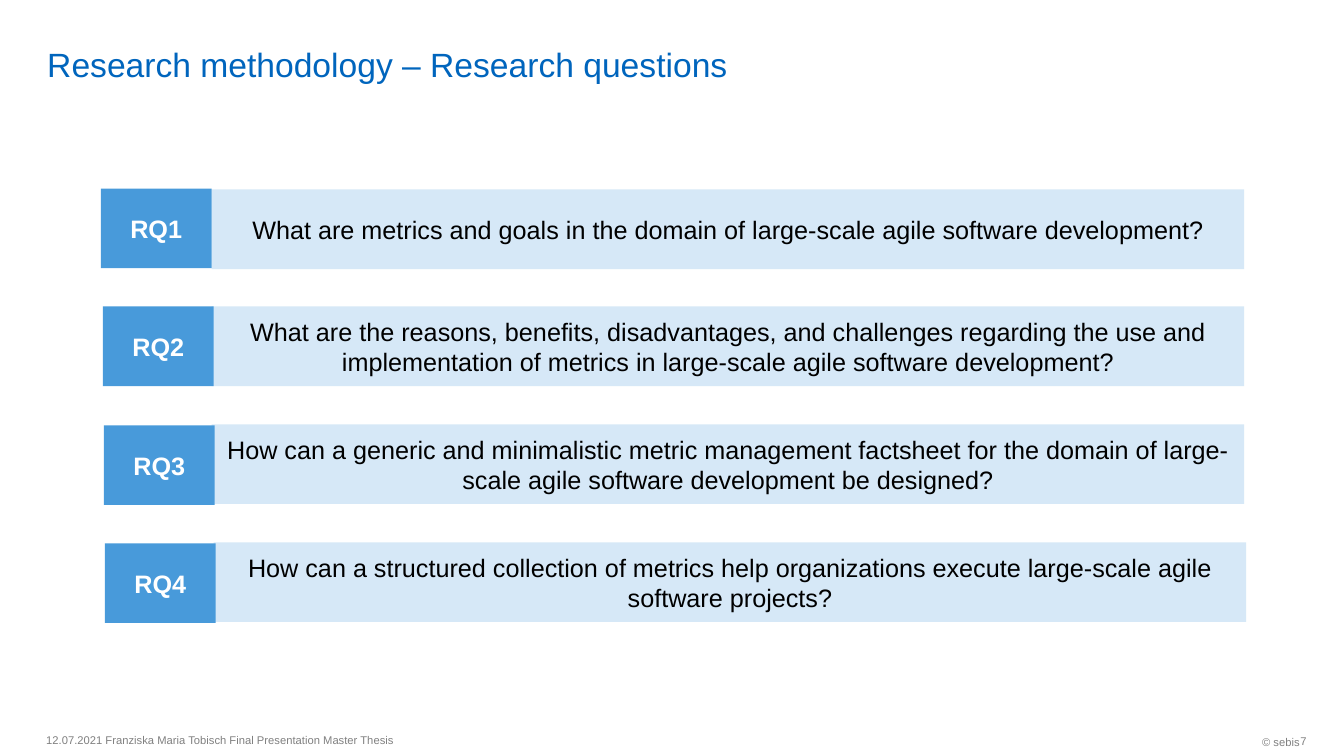
from dataclasses import dataclass

from pptx import Presentation
from pptx.dml.color import RGBColor
from pptx.enum.shapes import MSO_SHAPE
from pptx.enum.text import MSO_ANCHOR, PP_ALIGN
from pptx.util import Inches, Pt

FONT = "Arial"
TITLE_BLUE = "0065BD"
LABEL_BLUE = "489ADA"
QUESTION_BLUE = "D6E8F7"
FOOTER_GRAY = "808080"
ROW_HEIGHT = 0.79
LABEL_WIDTH = 1.1
QUESTION_WIDTH = 10.24
FOOTER_HEIGHT = 0.32


@dataclass
class ResearchQuestion:
    text: str
    label_left: float
    label_top: float
    question_left: float
    question_top: float


@dataclass
class FooterPart:
    text: str
    left: float
    top: float
    width: float
    align: PP_ALIGN
    right_inset: float = 0.1


QUESTIONS = [
    ResearchQuestion("What are metrics and goals in the domain of large-scale agile "
                     "software development?", 1, 1.87, 2.1, 1.88),
    ResearchQuestion("What are the reasons, benefits, disadvantages, and challenges "
                     "regarding the use and implementation of metrics in large-scale "
                     "agile software development?", 1.02, 3.04, 2.1, 3.04),
    ResearchQuestion("How can a generic and minimalistic metric management factsheet "
                     "for the domain of large-scale agile software development be "
                     "designed?", 1.03, 4.22, 2.1, 4.21),
    ResearchQuestion("How can a structured collection of metrics help organizations "
                     "execute large-scale agile software projects?",
                     1.04, 5.39, 2.12, 5.38),
]

FOOTER = [
    FooterPart("© sebis", 10.65, 7.2, 2.34, PP_ALIGN.RIGHT),
    FooterPart("12.07.2021 Franziska Maria Tobisch Final Presentation Master Thesis",
               0.36, 7.18, 6.3, PP_ALIGN.LEFT),
    FooterPart("7", 12.6, 7.19, 0.36, PP_ALIGN.RIGHT, right_inset=0),
]


def rgb(color: str) -> RGBColor:
    return RGBColor.from_string(color)


def add_text(slide, text: str, left: float, top: float, width: float, height: float, *,
             size: float, color: str, fill: str | None = None, bold: bool = False,
             align: PP_ALIGN = PP_ALIGN.LEFT, anchor: MSO_ANCHOR = MSO_ANCHOR.MIDDLE,
             right_inset: float = 0.1, vertical_inset: float = 0.05) -> None:
    """Add text, on a filled rectangle if a fill is given."""
    box = [Inches(length) for length in (left, top, width, height)]
    if fill:
        shape = slide.shapes.add_shape(MSO_SHAPE.RECTANGLE, *box)
        shape.shadow.inherit = False
        shape.fill.solid()
        shape.fill.fore_color.rgb = rgb(fill)
        shape.line.fill.background()
    else:
        shape = slide.shapes.add_textbox(*box)
    frame = shape.text_frame
    frame.word_wrap = True
    frame.vertical_anchor = anchor
    frame.margin_right = Inches(right_inset)
    frame.margin_top = frame.margin_bottom = Inches(vertical_inset)
    paragraph = frame.paragraphs[0]
    paragraph.alignment = align
    run = paragraph.add_run()
    run.text = text
    run.font.name = FONT
    run.font.size = Pt(size)
    run.font.bold = bold
    run.font.color.rgb = rgb(color)


def main() -> None:
    presentation = Presentation()
    presentation.slide_width = Inches(13.33)
    presentation.slide_height = Inches(7.5)
    slide = presentation.slides.add_slide(presentation.slide_layouts[6])

    # Title
    add_text(slide, "Research methodology – Research questions", 0.37, 0.05, 11.58, 0.79,
             size=24, color=TITLE_BLUE, anchor=MSO_ANCHOR.BOTTOM, vertical_inset=0)

    # Footer
    for part in FOOTER:
        add_text(slide, part.text, part.left, part.top, part.width, FOOTER_HEIGHT,
                 size=8, color=FOOTER_GRAY, align=part.align,
                 right_inset=part.right_inset)

    # Research questions, each with its label overlapping the left edge
    for number, question in enumerate(QUESTIONS, start=1):
        add_text(slide, question.text, question.question_left, question.question_top,
                 QUESTION_WIDTH, ROW_HEIGHT, size=18, color="000000",
                 fill=QUESTION_BLUE, align=PP_ALIGN.CENTER)
        add_text(slide, f"RQ{number}", question.label_left, question.label_top,
                 LABEL_WIDTH, ROW_HEIGHT, size=18, color="FFFFFF", bold=True,
                 fill=LABEL_BLUE, align=PP_ALIGN.CENTER)

    presentation.save("out.pptx")


if __name__ == "__main__":
    main()
